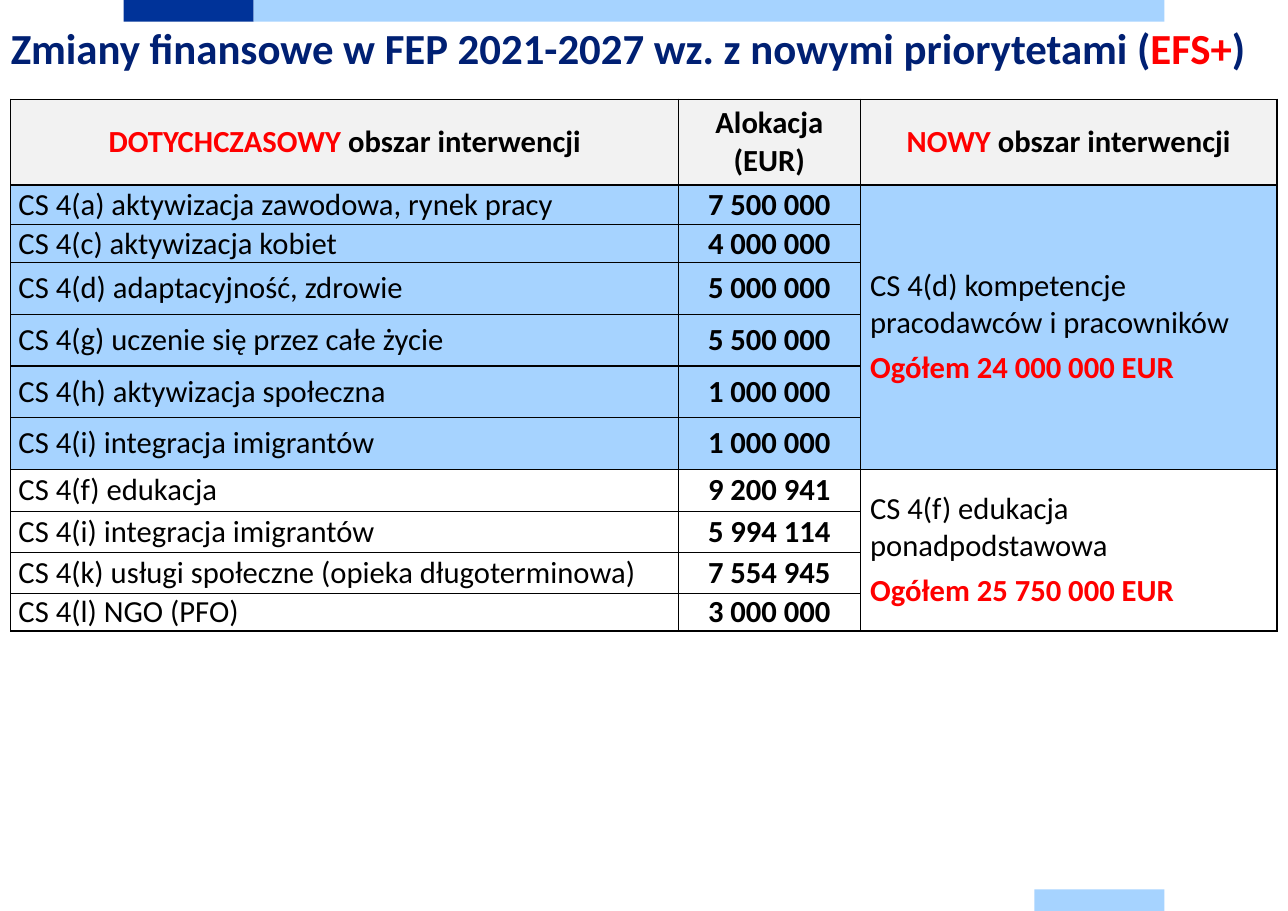
import lxml.etree
import pptx
import pptx.dml.color
import pptx.enum.shapes
import pptx.enum.text
import pptx.oxml.ns
import pptx.util

NAVY, TITLE, RED, BLACK = "003399", "002073", "FF0000", "000000"
BLUE, GREY = "A6D3FF", "F2F2F2"
LEFT = pptx.enum.text.PP_ALIGN.LEFT
CENTER = pptx.enum.text.PP_ALIGN.CENTER
MIDDLE = pptx.enum.text.MSO_ANCHOR.MIDDLE
TOP = pptx.enum.text.MSO_ANCHOR.TOP

HEADER = [
    [("DOTYCHCZASOWY", RED, True), (" obszar interwencji", BLACK, True)],
    [("Alokacja (EUR)", BLACK, True)],
    [("NOWY", RED, True), (" obszar interwencji", BLACK, True)],
]
GROUPS = [
    (BLUE, "CS 4(d) kompetencje pracodawców i pracowników", "Ogółem 24 000 000 EUR", [
        ("CS 4(a) aktywizacja zawodowa, rynek pracy", "7 500 000"),
        ("CS 4(c) aktywizacja kobiet", "4 000 000"),
        ("CS 4(d) adaptacyjność, zdrowie", "5 000 000"),
        ("CS 4(g) uczenie się przez całe życie", "5 500 000"),
        ("CS 4(h) aktywizacja społeczna", "1 000 000"),
        ("CS 4(i) integracja imigrantów", "1 000 000"),
    ]),
    (None, "CS 4(f) edukacja ponadpodstawowa", "Ogółem 25 750 000 EUR", [
        ("CS 4(f) edukacja", "9 200 941"),
        ("CS 4(i) integracja imigrantów", "5 994 114"),
        ("CS 4(k) usługi społeczne (opieka długoterminowa)", "7 554 945"),
        ("CS 4(l) NGO (PFO)", "3 000 000"),
    ]),
]
COLUMN_WIDTHS = [51.32, 13.97, 32.04]
ROW_HEIGHTS = [6.6, 3.04, 2.92] + [3.97] * 4 + [3.22, 3.18, 3.15, 2.88]


def colour(value):
    return pptx.dml.color.RGBColor.from_string(value)


def assign(target, values):
    for name, value in values.items():
        setattr(target, name, value)


class SlideBuilder:
    cell_size = pptx.util.Mm(3)
    columns, rows = 99, 70
    font = "Calibri"
    body_size = 20
    wide_insets = (0.09, 0.05)
    slim_insets = (0.07, 0)

    def __init__(self, deck):
        assign(deck, {"slide_width": self.grid(self.columns), "slide_height": self.grid(self.rows)})
        self.slide = deck.slides.add_slide(deck.slide_layouts[6])

    def grid(self, count):
        return round(count * self.cell_size)

    def place(self, *counts):
        return [self.grid(count) for count in counts]

    def bar(self, left, top, width, height, fill):
        shape = self.slide.shapes.add_shape(
            pptx.enum.shapes.MSO_SHAPE.RECTANGLE, *self.place(left, top, width, height))
        shape.shadow.inherit = False
        shape.fill.solid()
        shape.fill.fore_color.rgb = colour(fill)
        shape.line.fill.background()

    def add_text(self, frame, paragraphs, size, form):
        for index, spans in enumerate(paragraphs):
            para = frame.add_paragraph() if index else frame.paragraphs[0]
            assign(para, form)
            for text, ink, bold in spans:
                span = para.add_run()
                span.text = text
                assign(span.font, {"name": self.font, "size": pptx.util.Pt(size), "bold": bold})
                span.font.color.rgb = colour(ink)

    def title(self, left, top, width, height, spans):
        box = self.slide.shapes.add_textbox(*self.place(left, top, width, height))
        assign(box.text_frame, {
            "word_wrap": True, "vertical_anchor": TOP,
            "margin_left": 0, "margin_right": 0, "margin_top": 0, "margin_bottom": 0})
        self.add_text(box.text_frame, [spans], 28, {"line_spacing": pptx.util.Pt(33.9)})

    def table(self, left, top, widths, heights):
        frame = self.slide.shapes.add_table(
            len(heights), len(widths), *self.place(left, top, sum(widths), sum(heights)))
        table = frame.table
        assign(table, {"first_row": False, "horz_banding": False})
        for column, width in zip(table.columns, widths):
            column.width = self.grid(width)
        for row, height in zip(table.rows, heights):
            row.height = self.grid(height)
        for cell in table.iter_cells():
            self.border(cell)
        return table

    def border(self, cell):
        properties = cell._tc.get_or_add_tcPr()
        qn = pptx.oxml.ns.qn
        for side in ("a:lnL", "a:lnR", "a:lnT", "a:lnB"):
            line = lxml.etree.SubElement(properties, qn(side), w=str(pptx.util.Pt(1)))
            fill = lxml.etree.SubElement(line, qn("a:solidFill"))
            lxml.etree.SubElement(fill, qn("a:srgbClr"), val=BLACK)

    def fill_cell(self, cell, paragraphs, fill, align, insets):
        side, edge = (pptx.util.Inches(inset) for inset in insets)
        assign(cell, {
            "vertical_anchor": MIDDLE, "margin_left": side, "margin_right": side,
            "margin_top": edge, "margin_bottom": edge})
        if fill:
            cell.fill.solid()
            cell.fill.fore_color.rgb = colour(fill)
        else:
            cell.fill.background()
        self.add_text(cell.text_frame, paragraphs, self.body_size,
                      {"alignment": align, "space_after": pptx.util.Pt(5)})


def main():
    deck = pptx.Presentation()
    page = SlideBuilder(deck)
    page.bar(9.5, 0, 10, 1.67, NAVY)
    page.bar(19.5, 0, 70, 1.67, BLUE)
    page.bar(79.5, 68.33, 10, 1.67, BLUE)
    page.title(0.83, 1.6, 97.1, 4.75, [
        ("Zmiany finansowe w FEP 2021-2027 wz. z nowymi priorytetami (", TITLE, True),
        ("EFS+", RED, True), (")", TITLE, True)])

    table = page.table(0.83, 7.62, COLUMN_WIDTHS, ROW_HEIGHTS)
    for column, spans in enumerate(HEADER):
        page.fill_cell(table.cell(0, column), [spans], GREY, CENTER, page.wide_insets)
    first = 1
    for fill, new_area, total, areas in GROUPS:
        for row, (area, amount) in enumerate(areas, first):
            page.fill_cell(table.cell(row, 0), [[(area, BLACK, False)]], fill, LEFT, page.slim_insets)
            page.fill_cell(table.cell(row, 1), [[(amount, BLACK, True)]], fill, CENTER, page.slim_insets)
        merged = table.cell(first, 2)
        merged.merge(table.cell(first + len(areas) - 1, 2))
        page.fill_cell(merged, [[(new_area, BLACK, False)], [(total, RED, True)]],
                       fill, LEFT, page.wide_insets)
        first += len(areas)
    deck.save("out.pptx")


if __name__ == "__main__":
    main()
